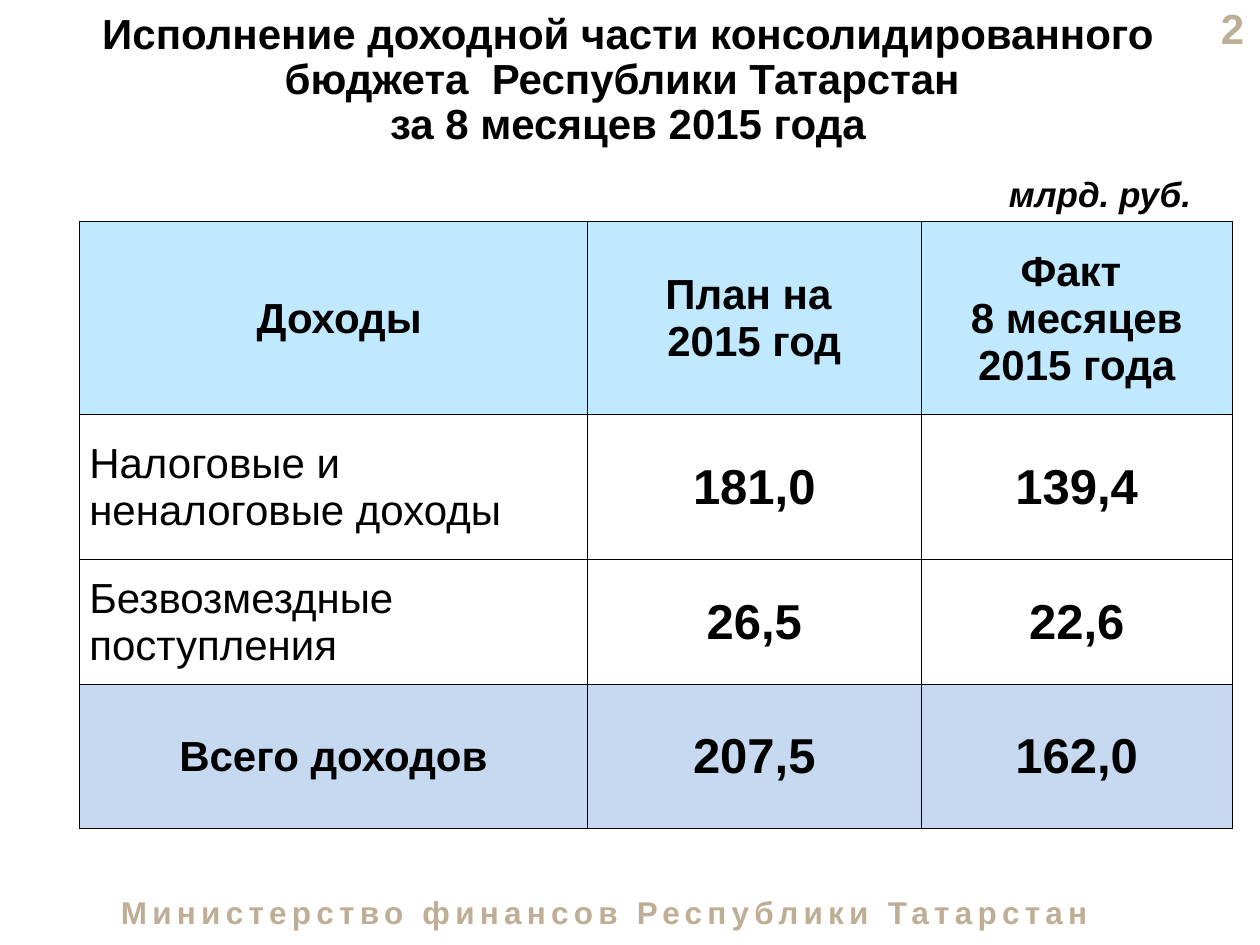
import copy

import pptx
import pptx.dml.color
import pptx.enum.text
import pptx.oxml
import pptx.oxml.ns
import pptx.util

Cm, Pt = pptx.util.Cm, pptx.util.Pt
RGBColor = pptx.dml.color.RGBColor
ALIGN = pptx.enum.text.PP_ALIGN
ANCHOR = pptx.enum.text.MSO_ANCHOR
FIT = pptx.enum.text.MSO_AUTO_SIZE
qn = pptx.oxml.ns.qn

BLACK = RGBColor(0x00, 0x00, 0x00)
SAND = RGBColor(0xBF, 0xAE, 0x96)
HEADER_BLUE = RGBColor(0xC0, 0xE9, 0xFF)
TOTAL_BLUE = RGBColor(0xC6, 0xD9, 0xF1)

TITLE = ("Исполнение доходной части консолидированного "
         "бюджета  Республики Татарстан \vза 8 месяцев 2015 года")
PAGE_NUMBER = "2"
MINISTRY = "Министерство финансов Республики Татарстан"
UNIT = "млрд. руб."

HEADING = {"size": Pt(24), "bold": True}
LABEL = {"size": Pt(24), "bold": False}
FIGURE = {"size": Pt(28), "bold": True}

# Row height in cm, fill, texts
ROWS = [
    (3.89, HEADER_BLUE, ["\u00a0Доходы", "План на \v2015 год", "Факт \v8 месяцев 2015 года"]),
    (2.92, None, ["Налоговые и неналоговые доходы", "181,0", "139,4"]),
    (2.51, None, ["Безвозмездные поступления", "26,5", "22,6"]),
    (2.92, TOTAL_BLUE, ["Всего доходов", "207,5", "162,0"]),
]
COLUMN_WIDTHS = [10.24, 6.73, 6.27]
TABLE_LEFT, TABLE_TOP = 1.6, 4.47


def write(frame, text, align, font, color=BLACK, spacing=None):
    """Fill a text frame with one paragraph; line breaks get the run format too."""
    para = frame.paragraphs[0]
    para.text = text
    para.alignment = align
    for span in para.runs:
        for name, value in {"name": "Arial", **font}.items():
            setattr(span.font, name, value)
        span.font.color.rgb = color
        if spacing:
            span.font._element.set("spc", str(spacing))
    for line_break in para._p.findall(qn("a:br")):
        line_break.insert(0, copy.deepcopy(para.runs[0].font._element))
    return para


def add_box(page, place, text, align, font, color=BLACK, spacing=None, **frame_format):
    box = page.shapes.add_textbox(*(Cm(length) for length in place))
    for name, value in {"word_wrap": True, **frame_format}.items():
        setattr(box.text_frame, name, value)
    write(box.text_frame, text, align, font, color, spacing)


def add_borders(cell):
    properties = cell._tc.get_or_add_tcPr()
    for side in ("lnL", "lnR", "lnT", "lnB"):
        properties.append(pptx.oxml.parse_xml(
            f'<a:{side} {pptx.oxml.ns.nsdecls("a")} w="{Pt(0.5)}">'
            f'<a:solidFill><a:srgbClr val="{BLACK}"/></a:solidFill></a:{side}>'))


def format_cell(cell, text, fill, is_label):
    if not is_label and fill != HEADER_BLUE:
        font, align, side_margin = FIGURE, ALIGN.CENTER, 0.03
    elif fill is None:
        font, align, side_margin = LABEL, ALIGN.LEFT, 0.2
    else:
        font, align, side_margin = HEADING, ALIGN.CENTER, 0.1
    cell_format = {
        "vertical_anchor": ANCHOR.MIDDLE,
        "margin_left": Cm(side_margin), "margin_right": Cm(side_margin),
        "margin_top": Cm(0.02), "margin_bottom": 0,
    }
    for name, value in cell_format.items():
        setattr(cell, name, value)
    write(cell.text_frame, text, align, font)
    add_borders(cell)
    if fill is None:
        cell.fill.background()
    else:
        cell.fill.solid()
        cell.fill.fore_color.rgb = fill


def add_income_table(page):
    heights = [height for height, _, _ in ROWS]
    table = page.shapes.add_table(
        len(ROWS), len(COLUMN_WIDTHS), Cm(TABLE_LEFT), Cm(TABLE_TOP),
        Cm(sum(COLUMN_WIDTHS)), Cm(sum(heights))).table
    table.first_row = table.horz_banding = False
    for column, width in zip(table.columns, COLUMN_WIDTHS):
        column.width = Cm(width)
    for row, (height, fill, texts) in zip(table.rows, ROWS):
        row.height = Cm(height)
        for index, (cell, text) in enumerate(zip(row.cells, texts)):
            format_cell(cell, text, fill, is_label=index == 0)


def add_title(page):
    title = page.shapes.title
    place = {"left": 1.42, "top": 0.13, "width": 22.48, "height": 2.92}
    for name, length in place.items():
        setattr(title, name, Cm(length))
    frame_format = {"vertical_anchor": ANCHOR.TOP, "word_wrap": True, "auto_size": FIT.NONE}
    for name, value in frame_format.items():
        setattr(title.text_frame, name, value)
    para = write(title.text_frame, TITLE, ALIGN.CENTER, HEADING)
    para.line_spacing = 0.9
    para.space_before = Pt(0)


def main():
    deck = pptx.Presentation()
    deck.slide_width, deck.slide_height = Cm(25.4), Cm(19.05)
    page = deck.slides.add_slide(deck.slide_layouts[5])
    add_title(page)
    add_box(page, (23.7, 0.13, 1.63, 0.86), PAGE_NUMBER, ALIGN.RIGHT, HEADING, SAND,
            vertical_anchor=ANCHOR.MIDDLE)
    add_box(page, (1.42, 17.88, 21.54, 1.02), MINISTRY, ALIGN.CENTER,
            {"size": Pt(18), "bold": True}, SAND, spacing=300,
            auto_size=FIT.SHAPE_TO_FIT_TEXT)
    add_box(page, (20.09, 3.35, 4.22, 1.12), UNIT, ALIGN.LEFT,
            {"size": Pt(20), "bold": True, "italic": True},
            word_wrap=False, auto_size=FIT.SHAPE_TO_FIT_TEXT)
    add_income_table(page)
    deck.save("out.pptx")


if __name__ == "__main__":
    main()
